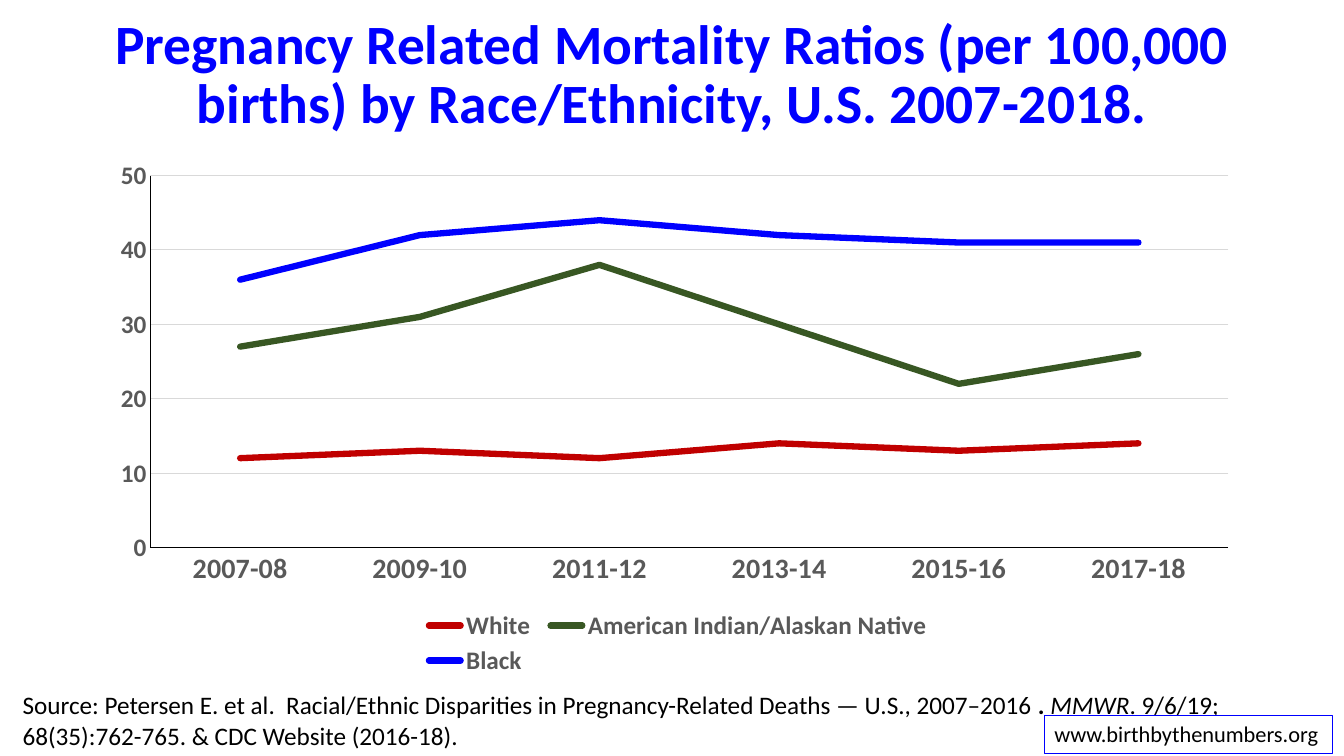
from lxml.etree import SubElement
from pptx import Presentation
from pptx.chart.data import CategoryChartData
from pptx.dml.color import RGBColor
from pptx.enum.chart import XL_CHART_TYPE as ChartType
from pptx.enum.chart import XL_LEGEND_POSITION as LegendPosition
from pptx.enum.chart import XL_TICK_MARK as TickMark
from pptx.enum.shapes import MSO_SHAPE as ShapeType
from pptx.enum.text import MSO_ANCHOR as Anchor
from pptx.enum.text import MSO_AUTO_SIZE as AutoSize
from pptx.enum.text import PP_ALIGN as Align
from pptx.oxml.ns import qn
from pptx.util import Pt

FONT = "Calibri"
BLACK, WHITE, BLUE, GRAY, GRID = "000000", "FFFFFF", "0000FF", "595959", "D9D9D9"
PERIODS = ["2007-08", "2009-10", "2011-12", "2013-14", "2015-16", "2017-18"]
RATIOS = [
    ("White", "C00000", [12, 13, 12, 14, 13, 14]),
    ("American Indian/Alaskan Native", "385723", [27, 31, 38, 30, 22, 26]),
    ("Black", BLUE, [36, 42, 44, 42, 41, 41]),
]


def color(value):
    """Turn a hex string into a colour."""
    return RGBColor.from_string(value)


def points(box):
    """Turn a box of left, top, width and height into lengths."""
    return [Pt(length) for length in box]


def set_font(font, size, value, bold=False):
    """Set the face, size, colour and weight of a font."""
    font.name, font.size, font.bold = FONT, Pt(size), bold
    font.color.rgb = color(value)


def set_line(line, value, width):
    """Set the colour and width of a line."""
    line.color.rgb = color(value)
    line.width = Pt(width)


def add_title(slide, box, text):
    """Fill and place the title placeholder."""
    title = slide.shapes.title
    title.left, title.top, title.width, title.height = points(box)
    frame = title.text_frame
    frame.text = text
    frame.auto_size = AutoSize.NONE
    frame.word_wrap = True
    frame.vertical_anchor = Anchor.MIDDLE
    paragraph = frame.paragraphs[0]
    paragraph.alignment = Align.CENTER
    paragraph.line_spacing = 0.9
    set_font(paragraph.font, 39.6, BLUE, True)


def set_layout(element, fractions, inner=False):
    """Place a chart part at fractions of the chart's box."""
    layout = element.find(qn("c:layout"))
    if layout is None:
        layout = SubElement(element, qn("c:layout"))
        element.insert(1 if element.tag == qn("c:legend") else 0, layout)
    manual = SubElement(layout, qn("c:manualLayout"))
    settings = [("layoutTarget", "inner")] if inner else []
    settings += [("xMode", "edge"), ("yMode", "edge")]
    settings += zip("xywh", fractions)
    for name, value in settings:
        SubElement(manual, qn(f"c:{name}")).set("val", str(value))


def add_ratio_chart(slide, box):
    """Draw one line of mortality ratios for each group."""
    data = CategoryChartData(number_format="0")
    data.categories = PERIODS
    for name, _, values in RATIOS:
        data.add_series(name, values)
    chart = slide.shapes.add_chart(ChartType.LINE, *points(box), data).chart
    chart.has_title = False
    set_font(chart.font, 10, BLACK)
    plot = chart.plots[0]
    plot.vary_by_categories = False
    for series, (_, value, _) in zip(plot.series, RATIOS):
        series.smooth = False
        set_line(series.format.line, value, 4.5)
        series.format.line._get_or_add_ln().set("cap", "rnd")

    for axis, size in ((chart.category_axis, 20), (chart.value_axis, 18)):
        axis.major_tick_mark = axis.minor_tick_mark = TickMark.NONE
        set_font(axis.tick_labels.font, size, GRAY, True)
        set_line(axis.format.line, BLACK, 0.75)
    axis = chart.value_axis
    axis.minimum_scale, axis.maximum_scale, axis.major_unit = 0, 50, 10
    axis.has_major_gridlines = True
    set_line(axis.major_gridlines.format.line, GRID, 0.75)

    chart.has_legend = True
    legend = chart.legend
    legend.position = LegendPosition.BOTTOM
    legend.include_in_layout = False
    set_font(legend.font, 18, GRAY, True)
    set_layout(chart.plots[0]._element.getparent(), (0.05, 0.05, 0.93, 0.7), True)
    set_layout(legend._element, (0.28, 0.86, 0.45, 0.14))


def add_source(slide, box):
    """Write the source citation with its journal in italics."""
    frame = slide.shapes.add_textbox(*points(box)).text_frame
    frame.word_wrap = True
    paragraph = frame.paragraphs[0]
    for text, bold, italic in (
        ("Source: Petersen E. et al.  Racial/Ethnic Disparities in "
         "Pregnancy-Related Deaths — U.S., 2007–2016 ", False, False),
        (". ", True, False),
        ("MMWR", False, True),
        (". 9/6/19; 68(35):762-765. & CDC Website (2016-18).", False, False),
    ):
        run = paragraph.add_run()
        run.text = text
        set_font(run.font, 18, BLACK, bold)
        run.font.italic = italic


def add_website(slide, box):
    """Draw the framed web address."""
    shape = slide.shapes.add_shape(ShapeType.RECTANGLE, *points(box))
    shape.shadow.inherit = False
    shape.fill.solid()
    shape.fill.fore_color.rgb = color(WHITE)
    set_line(shape.line, BLUE, 0.75)
    frame = shape.text_frame
    frame.text = "www.birthbythenumbers.org"
    frame.word_wrap = False
    frame.vertical_anchor = Anchor.TOP
    paragraph = frame.paragraphs[0]
    paragraph.alignment = Align.LEFT
    set_font(paragraph.font, 16, BLACK)


def main():
    """Build and save the slide."""
    presentation = Presentation()
    presentation.slide_width, presentation.slide_height = Pt(960), Pt(540)
    slide = presentation.slides.add_slide(presentation.slide_layouts[5])
    add_title(slide, (66, 2, 828, 104.5),
              "Pregnancy Related Mortality Ratios (per 100,000 births) "
              "by Race/Ethnicity, U.S. 2007-2018.")
    add_ratio_chart(slide, (66, 106.5, 828, 379.5))
    add_source(slide, (9, 489, 910, 51))
    add_website(slide, (746, 511, 206, 27))
    presentation.save("out.pptx")


if __name__ == "__main__":
    main()
